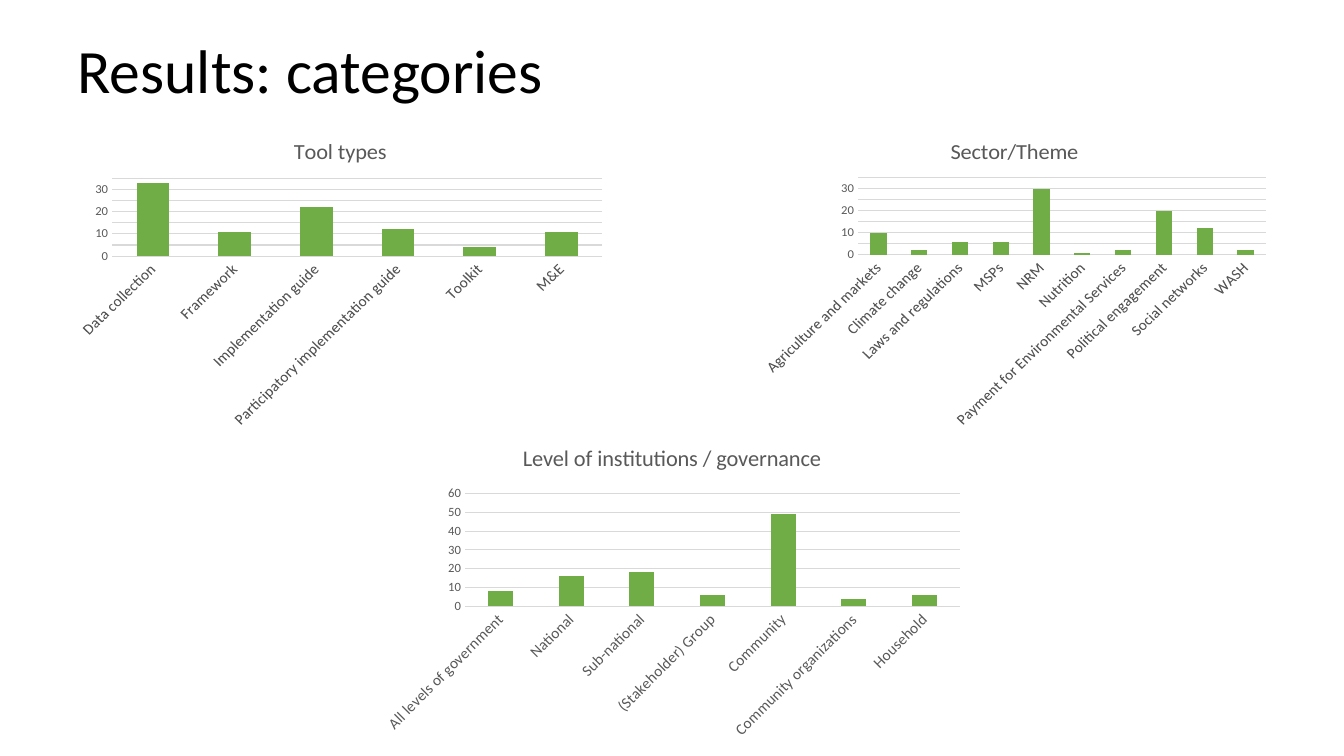
from pptx import Presentation
from pptx.chart.data import CategoryChartData as Data
from pptx.dml.color import RGBColor
from pptx.enum.chart import XL_CHART_TYPE as Kind, XL_TICK_MARK as Tick
from pptx.enum.text import MSO_ANCHOR as Anchor
from pptx.util import Inches, Pt

BLACK = RGBColor(0x00, 0x00, 0x00)
GRAY = RGBColor(0x59, 0x59, 0x59)
PALE = RGBColor(0xD9, 0xD9, 0xD9)
GREEN = RGBColor(0x70, 0xAD, 0x47)

TOOLS = {
    "Data collection": 33,
    "Framework": 11,
    "Implementation guide": 22,
    "Participatory implementation guide": 12,
    "Toolkit": 4,
    "M&E": 11,
}
THEMES = {
    "Agriculture and markets": 10,
    "Climate change": 2,
    "Laws and regulations": 6,
    "MSPs": 6,
    "NRM": 30,
    "Nutrition": 1,
    "Payment for Environmental Services": 2,
    "Political engagement": 20,
    "Social networks": 12,
    "WASH": 2,
}
LEVELS = {
    "All levels of government": 8,
    "National": 16,
    "Sub-national": 18,
    "(Stakeholder) Group": 6,
    "Community": 49,
    "Community organizations": 4,
    "Household": 6,
}


class Board:
    face = "Calibri"

    def __init__(self, slide):
        self.slide = slide

    def style(self, font, size, color):
        font.name = self.face
        font.size = Pt(size)
        font.bold = False
        font.color.rgb = color

    def label(self, frame, text, size=16, color=GRAY, spacing=None):
        para = frame.paragraphs[0]
        para.line_spacing = spacing
        run = para.add_run()
        run.text = text
        self.style(run.font, size, color)

    def title(self, text, box):
        shape = self.slide.shapes.add_textbox(*map(Inches, box))
        frame = shape.text_frame
        frame.word_wrap = True
        frame.vertical_anchor = Anchor.MIDDLE
        self.label(frame, text, size=44, color=BLACK, spacing=0.9)

    def axis(self, axis, size):
        axis.major_tick_mark = axis.minor_tick_mark = Tick.NONE
        self.style(axis.tick_labels.font, size, GRAY)

    def chart(self, name, counts, box, top, step, gap=150):
        data = Data()
        data.categories = list(counts)
        data.add_series("Series 1", list(counts.values()))
        frame = self.slide.shapes.add_chart(
            Kind.COLUMN_CLUSTERED, *map(Inches, box), data)
        chart = frame.chart
        self.style(chart.font, 10, BLACK)
        chart.has_legend = False
        chart.has_title = True
        self.label(chart.chart_title.text_frame, name)
        chart.chart_title.include_in_layout = False

        cats, vals = chart.category_axis, chart.value_axis
        self.axis(cats, 11)
        self.axis(vals, 9)
        vals.minimum_scale, vals.maximum_scale = 0, top
        vals.major_unit = step
        vals.format.line.fill.background()
        for line in (cats.format.line, vals.major_gridlines.format.line):
            line.color.rgb = PALE
            line.width = Pt(0.75)
        body = chart.element.xpath(".//c:catAx/c:txPr/a:bodyPr")[0]
        body.set("rot", "-2700000")

        plot = chart.plots[0]
        plot.gap_width = gap
        plot.vary_by_categories = False
        fill = plot.series[0].format.fill
        fill.solid()
        fill.fore_color.rgb = GREEN


def main():
    deck = Presentation()
    deck.slide_width, deck.slide_height = Inches(13.33), Inches(7.5)
    board = Board(deck.slides.add_slide(deck.slide_layouts[6]))
    board.title("Results: categories", (0.67, 0, 11.5, 1.45))
    board.chart("Tool types", TOOLS, (0.67, 1.21, 5.41, 3.04), 35, 5)
    board.chart("Sector/Theme", THEMES, (7.46, 1.21, 5.2, 3.04), 35, 5)
    board.chart("Level of institutions / governance", LEVELS,
                (3.69, 4.24, 5.95, 3.16), 60, 10, gap=182)
    deck.save("out.pptx")


if __name__ == "__main__":
    main()
